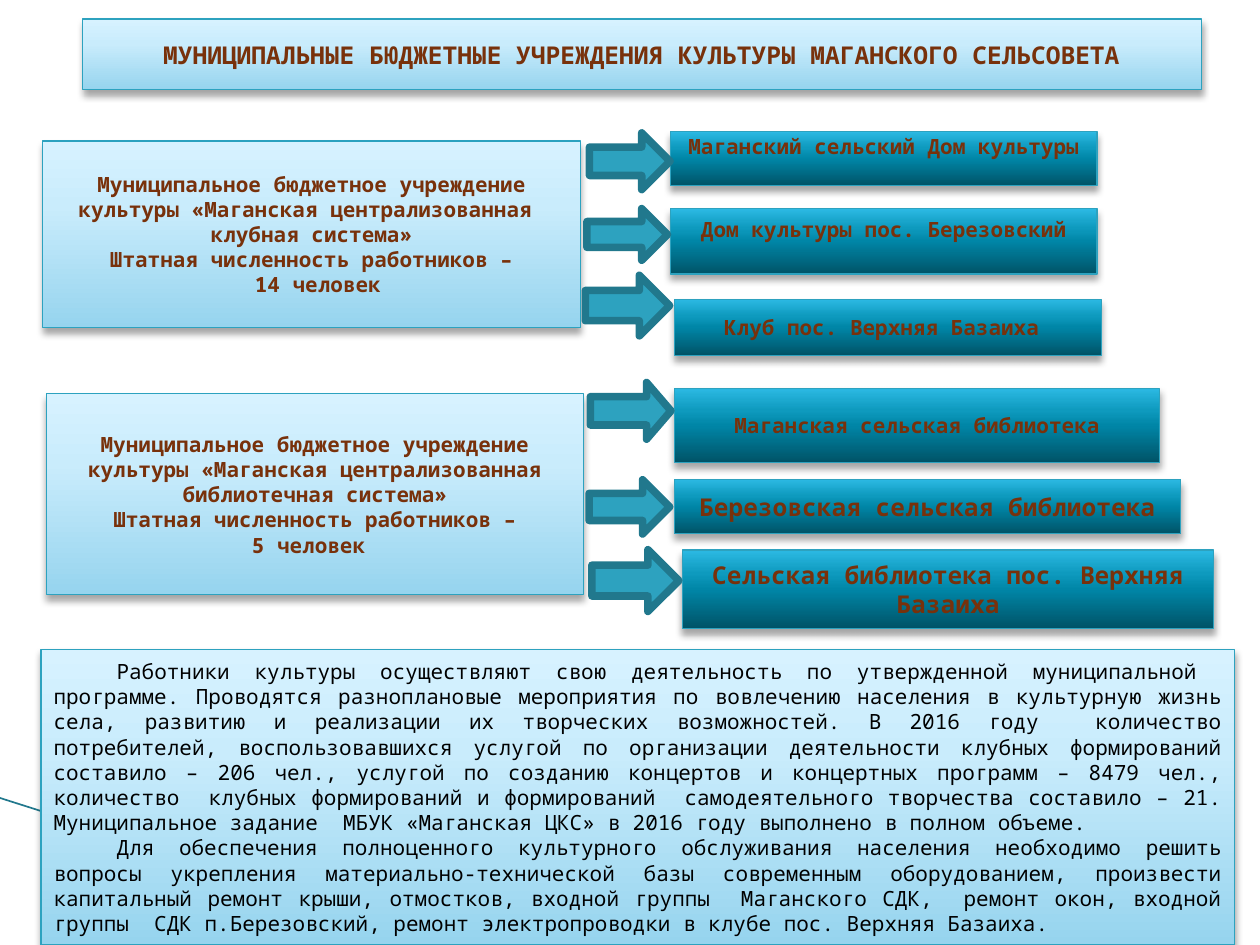
from lxml import etree
from pptx import Presentation
from pptx.dml.color import RGBColor
from pptx.enum import shapes, text
from pptx.oxml import ns
from pptx.util import Pt

BROWN = RGBColor(0x78, 0x31, 0x0B)
BLACK = RGBColor(0, 0, 0)
TEAL = RGBColor(0x2D, 0xA2, 0xBF)
DARK_TEAL = RGBColor(0x21, 0x78, 0x8D)
PALE_STOPS = [
    (0, RGBColor(0x96, 0xD4, 0xEE)),
    (65, RGBColor(0xC9, 0xEC, 0xFC)),
    (100, RGBColor(0xD7, 0xF2, 0xFF)),
]
DEEP_STOPS = [
    (0, RGBColor(0x00, 0x53, 0x67)),
    (50, RGBColor(0x00, 0x86, 0xA7)),
    (70, RGBColor(0x0E, 0x9A, 0xBE)),
    (100, RGBColor(0x2C, 0xB9, 0xE3)),
]
FONT = "Noto Sans Mono"


def add_element(parent, tag, **attributes):
    element = etree.SubElement(parent, ns.qn(tag))
    for name, value in attributes.items():
        element.set(name, str(value))
    return element


def add_panel(slide, bounds, stops, lines, size=12, color=BROWN, bold=True,
              align=text.PP_ALIGN.CENTER, indent=0, bottom=3.6):
    """Add a shadowed gradient rectangle with one paragraph per line."""
    box = slide.shapes.add_shape(shapes.MSO_SHAPE.RECTANGLE, *map(Pt, bounds))
    box.line.color.rgb = TEAL
    box.line.width = Pt(0.75)

    box.fill.gradient()
    box.fill.gradient_angle = 90
    stop_list = box._element.spPr.find(".//" + ns.qn("a:gsLst"))
    for stop in list(stop_list):
        stop_list.remove(stop)
    for position, shade in stops:
        stop = add_element(stop_list, "a:gs", pos=position * 1000)
        add_element(stop, "a:srgbClr", val=shade)

    box.shadow.inherit = False
    effects = box._element.spPr.find(ns.qn("a:effectLst"))
    shadow = add_element(effects, "a:outerShdw", blurRad=Pt(4), dist=Pt(3),
                         dir=90 * 60000, rotWithShape=0)
    shadow_color = add_element(shadow, "a:srgbClr", val=BLACK)
    add_element(shadow_color, "a:alpha", val=35000)

    frame = box.text_frame
    frame.word_wrap = True
    frame.vertical_anchor = text.MSO_ANCHOR.MIDDLE
    frame.margin_bottom = Pt(bottom)
    for index, line in enumerate(lines):
        para = frame.add_paragraph() if index else frame.paragraphs[0]
        para.alignment = align
        if indent:
            para._p.get_or_add_pPr().set("indent", str(Pt(indent)))
        span = para.add_run()
        span.text = line
        span.font.name = FONT
        span.font.size = Pt(size)
        span.font.bold = bold
        span.font.color.rgb = color


deck = Presentation()
deck.slide_width = Pt(720)
deck.slide_height = Pt(540)
page = deck.slides.add_slide(deck.slide_layouts[6])

# Thin decorative line running in from the left edge
edge_line = page.shapes.add_connector(
    shapes.MSO_CONNECTOR.STRAIGHT, Pt(0), Pt(456), Pt(264), Pt(540))
edge_line.line.color.rgb = DARK_TEAL
edge_line.line.width = Pt(0.95)
add_element(edge_line._element.spPr, "a:effectLst")

# Title
add_panel(page, (47.3, 10.9, 639.4, 40.3), PALE_STOPS,
          ["МУНИЦИПАЛЬНЫЕ БЮДЖЕТНЫЕ УЧРЕЖДЕНИЯ КУЛЬТУРЫ МАГАНСКОГО СЕЛЬСОВЕТА"],
          size=14)

# The two parent institutions
institutions = [
    ((24.4, 80.5, 307.2, 106.6), "централизованная  клубная", " 14 человек"),
    ((26.6, 224.9, 306.7, 115), "централизованная библиотечная", "5 человек "),
]
for bounds, system, staff in institutions:
    add_panel(page, bounds, PALE_STOPS, [
        f"Муниципальное бюджетное учреждение культуры «Маганская {system} система»",
        "Штатная численность работников –",
        staff,
    ])

# Their branches: bounds, name, text size, bottom inset
branches = [
    ((383, 75.2, 244, 30.8), "Маганский сельский Дом культуры", 12, 18),
    ((383, 119.1, 244, 37.5), "Дом культуры пос. Березовский", 12, 18),
    ((385.4, 171, 244, 32), "Клуб пос. Верхняя Базаиха ", 12, 3.6),
    ((385.4, 221.8, 277.2, 42.5), "Маганская сельская библиотека", 12, 3.6),
    ((385.4, 274, 289.4, 31), "Березовская сельская библиотека", 14, 3.6),
    ((390, 314.3, 303.6, 44.8), "Сельская библиотека пос. Верхняя Базаиха",
     14, 3.6),
]
for bounds, name, size, bottom in branches:
    add_panel(page, bounds, DEEP_STOPS, [name], size=size, bottom=bottom)

# Arrows to the branches: bounds before rotation, head ratio
arrows = [
    ((343.7, 69.1, 32.4, 46.1), 0.5),
    ((343.7, 110.9, 29.5, 46.1), 0.5),
    ((341.3, 150.5, 34.6, 48.2), 0.5),
    ((344.2, 211.7, 32.4, 46.1), 0.43),
    ((344.2, 266.6, 31, 46.1), 0.5),
    ((345.4, 306.9, 35.3, 49.7), 0.5),
]
for bounds, head in arrows:
    arrow = page.shapes.add_shape(shapes.MSO_SHAPE.DOWN_ARROW, *map(Pt, bounds))
    arrow.rotation = 270
    arrow.adjustments[1] = head
    arrow.shadow.inherit = False
    arrow.fill.solid()
    arrow.fill.fore_color.rgb = TEAL
    arrow.line.color.rgb = DARK_TEAL
    arrow.line.width = Pt(4.33)

# Summary of the year
add_panel(page, (23.5, 371.1, 682, 168.9), PALE_STOPS, [
    "Работники культуры осуществляют свою деятельность по утвержденной "
    "муниципальной  программе. Проводятся разноплановые мероприятия по "
    "вовлечению населения в культурную жизнь села, развитию и реализации их "
    "творческих возможностей. В 2016 году  количество потребителей, "
    "воспользовавшихся услугой по организации деятельности клубных "
    "формирований составило – 206 чел., услугой по созданию концертов и "
    "концертных программ – 8479 чел., количество  клубных формирований и "
    "формирований  самодеятельного творчества составило – 21. Муниципальное "
    "задание  МБУК «Маганская ЦКС» в 2016 году выполнено в полном объеме.",
    "Для обеспечения полноценного культурного обслуживания населения "
    "необходимо решить вопросы укрепления материально-технической базы "
    "современным оборудованием, произвести капитальный ремонт крыши, "
    "отмостков, входной группы  Маганского СДК,  ремонт окон, входной группы  "
    "СДК п.Березовский, ремонт электропроводки в клубе пос. Верхняя Базаиха.",
], color=BLACK, bold=False, align=text.PP_ALIGN.JUSTIFY, indent=36)

deck.save("out.pptx")
